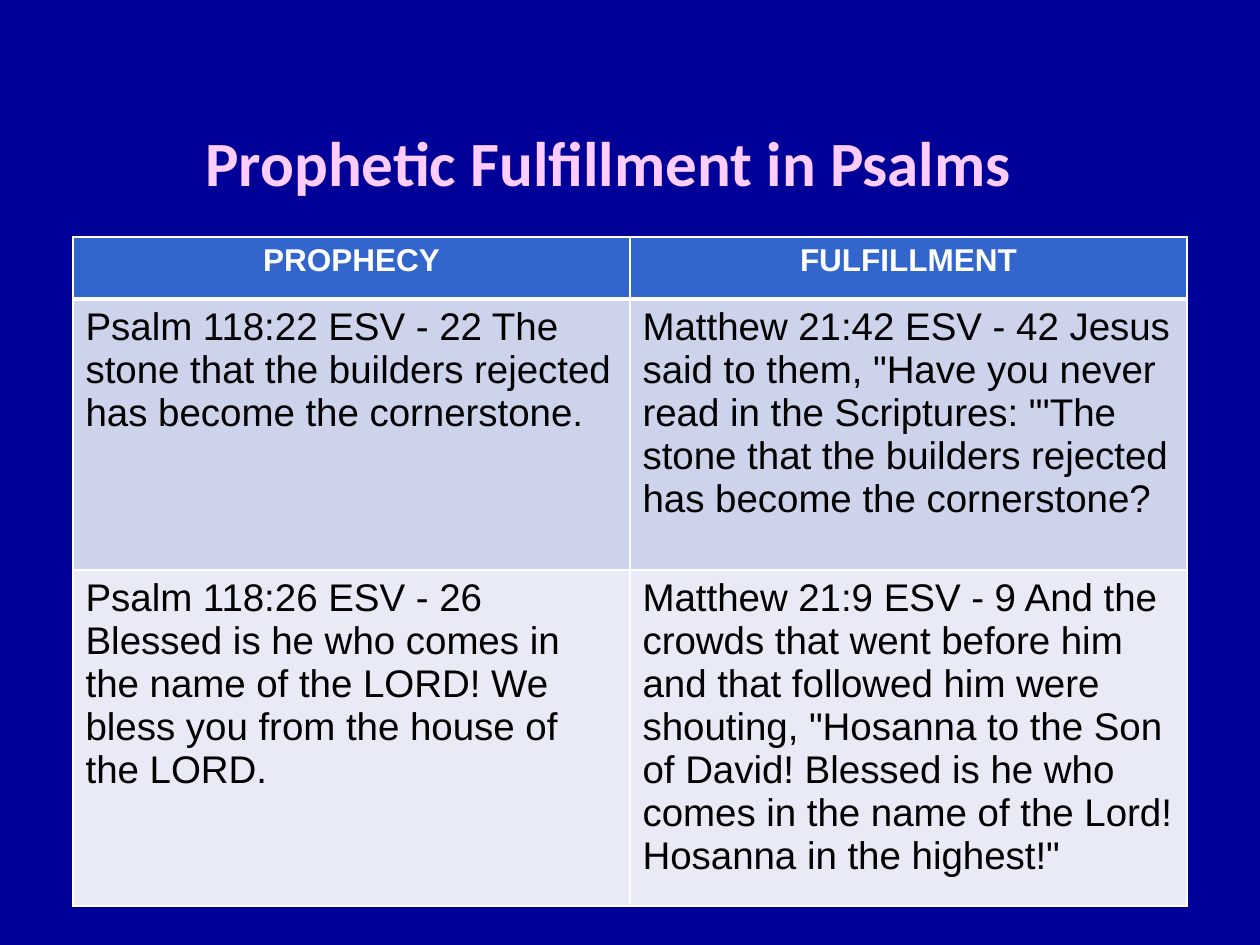
"""Build the slide on prophetic fulfillment in Psalms."""
from lxml import etree
from pptx import Presentation, util as u
from pptx.dml.color import RGBColor
from pptx.enum import text
from pptx.oxml import ns

TITLE = "Prophetic Fulfillment in Psalms"
ROWS = [
    ("PROPHECY", "FULFILLMENT"),
    ("Psalm 118:22 ESV - 22 The stone that the builders rejected has become the cornerstone.",
     "Matthew 21:42 ESV - 42 Jesus said to them, \"Have you never read in the Scriptures: "
     "\"'The stone that the builders rejected has become the cornerstone?"),
    ("Psalm 118:26 ESV - 26 Blessed is he who comes in the name of the LORD! "
     "We bless you from the house of the LORD.",
     "Matthew 21:9 ESV - 9 And the crowds that went before him and that followed him were "
     "shouting, \"Hosanna to the Son of David! Blessed is he who comes in the name of the "
     "Lord! Hosanna in the highest!\""),
]
COLORS = {
    "back": "000099", "title": "FFCCFF", "white": "FFFFFF", "black": "000000",
    "header": "3366CC", "band1": "CED3EC", "band2": "E8EAF6",
}
FILLS = ["header", "band1", "band2"]
ROW_HEIGHTS = [62, 271, 314]
COLUMN_WIDTH = 557
LEFT, TABLE_TOP = 73, 237


def px(count):
    return u.Emu(count * u.Inches(1) // 126)


def color(name):
    return RGBColor.from_string(COLORS[name])


def write(frame, words, font, size, ink, bold, align):
    para = frame.paragraphs[0]
    para.alignment = align
    span = para.add_run()
    span.text = words
    span.font.name = font
    span.font.size = u.Pt(size)
    span.font.bold = bold
    span.font.color.rgb = color(ink)


def add_border(cell, side, points):
    properties = cell._tc.get_or_add_tcPr()
    line = etree.SubElement(properties, ns.qn(f"a:ln{side}"), w=str(u.Pt(points)))
    fill = etree.SubElement(line, ns.qn("a:solidFill"))
    etree.SubElement(fill, ns.qn("a:srgbClr"), val=COLORS["white"])


def add_title(page):
    box = page.shapes.add_textbox(px(LEFT), px(84), px(1071), px(154))
    frame = box.text_frame
    frame.word_wrap = True
    frame.vertical_anchor = text.MSO_ANCHOR.MIDDLE
    write(frame, TITLE, "Calibri", 36, "title", True, text.PP_ALIGN.CENTER)


def add_verses(page):
    columns = len(ROWS[0])
    table = page.shapes.add_table(
        len(ROWS), columns, px(LEFT), px(TABLE_TOP),
        px(COLUMN_WIDTH * columns), px(sum(ROW_HEIGHTS))).table
    for column in table.columns:
        column.width = px(COLUMN_WIDTH)
    for index, (words, height) in enumerate(zip(ROWS, ROW_HEIGHTS)):
        table.rows[index].height = px(height)
        header = index == 0
        size, ink = (18, "white") if header else (22, "black")
        align = text.PP_ALIGN.CENTER if header else text.PP_ALIGN.LEFT
        widths = {"L": 1, "R": 1, "T": 3 if index == 1 else 1, "B": 3 if header else 1}
        for cell, verse in zip(table.rows[index].cells, words):
            for side, points in widths.items():
                add_border(cell, side, points)
            cell.fill.solid()
            cell.fill.fore_color.rgb = color(FILLS[index])
            write(cell.text_frame, verse, "Arial", size, ink, header, align)


def main():
    deck = Presentation()
    deck.slide_width, deck.slide_height = px(1260), px(945)
    page = deck.slides.add_slide(deck.slide_layouts[6])
    page.background.fill.solid()
    page.background.fill.fore_color.rgb = color("back")
    add_title(page)
    add_verses(page)
    deck.save("out.pptx")


if __name__ == "__main__":
    main()
